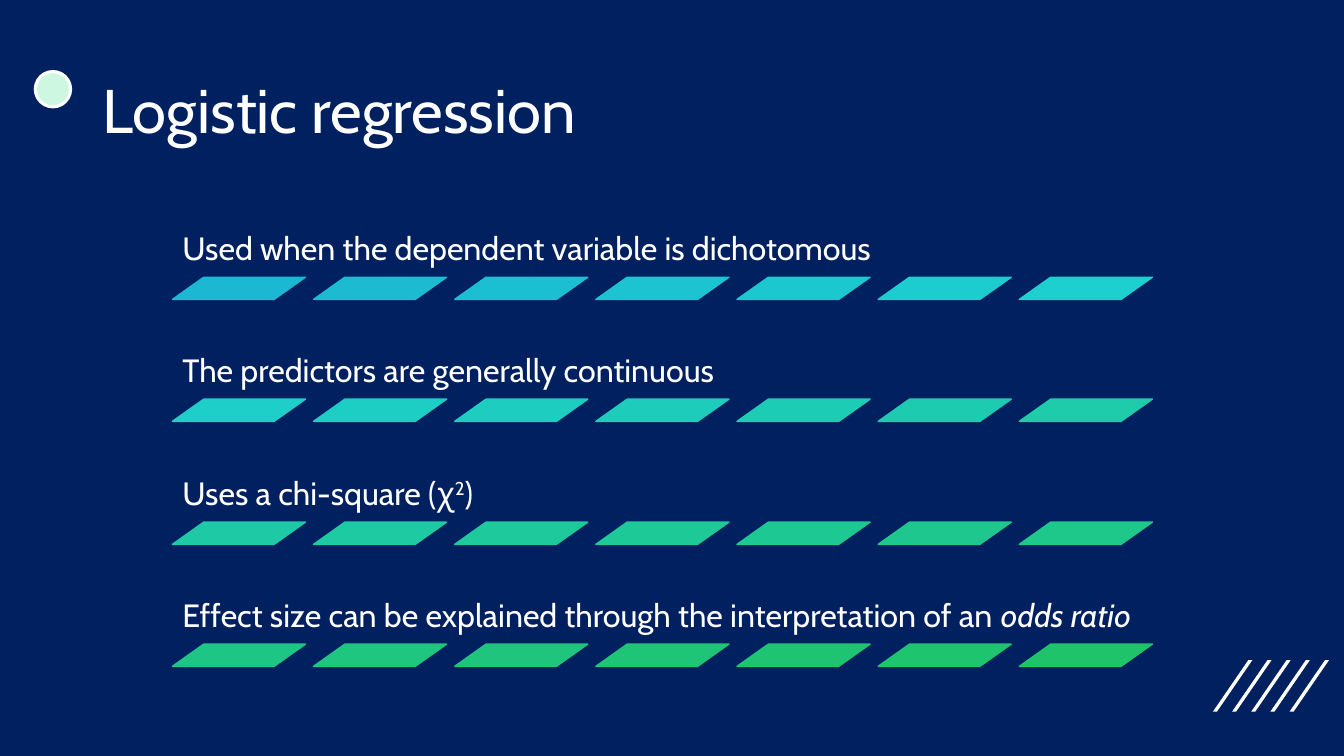
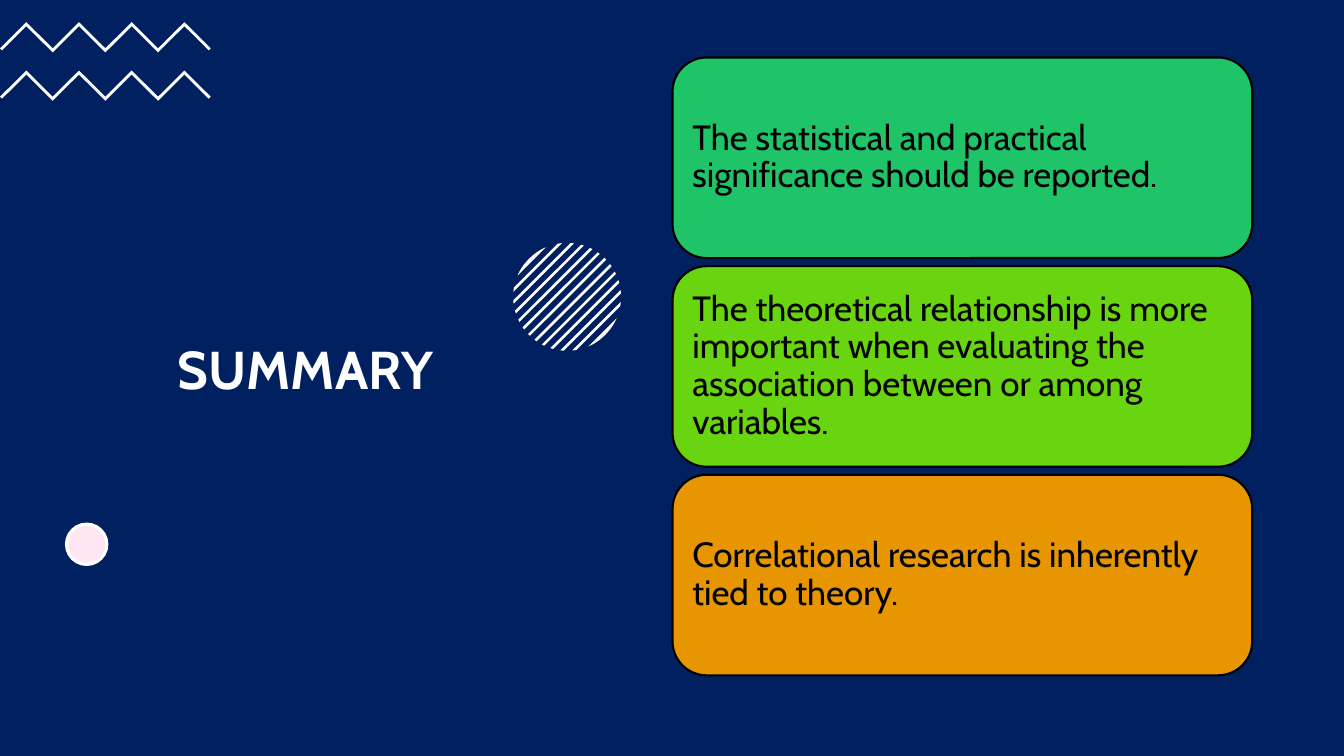
from colorsys import hls_to_rgb, rgb_to_hls
from dataclasses import dataclass
from math import sqrt

from pptx import Presentation
from pptx.dml.color import RGBColor as Rgb
from pptx.enum.shapes import MSO_SHAPE as Shape
from pptx.enum.text import MSO_ANCHOR as Anchor, PP_ALIGN as Align
from pptx.util import Pt

SCALE = 9144  # EMU in one px, 100 px to the inch


@dataclass(frozen=True)
class Theme:
    font: str = "Cabin"
    navy: str = "002060"
    white: str = "FFFFFF"
    black: str = "000000"
    mint: str = "CDF7E0"
    pink: str = "FFE6F2"
    blue: str = "1CB7D2"
    green: str = "1FC36A"
    cards: tuple = ("1FC368", "69D510", "E79500")
    title: int = 44
    head: int = 38
    card: int = 25
    row: int = 23


T = Theme()

ROWS = (
    ["Used when the dependent variable is dichotomous"],
    ["The predictors are generally continuous"],
    ["Uses a chi-square (χ", ("2", "sup"), ")"],
    ["Effect size can be explained through the interpretation of an ",
     ("odds ratio", "italic")],
)
CARDS = (
    "The statistical and practical significance should be reported.",
    "The theoretical relationship is more important when evaluating "
    "the association between or among variables.",
    "Correlational research is inherently tied to theory.",
)


def px(n):
    return round(n * SCALE)


# Basic elements

def paint(shape, fill, line=None, width=1):
    shape.shadow.inherit = False
    shape.fill.solid()
    shape.fill.fore_color.rgb = Rgb.from_string(fill)
    if line:
        shape.line.color.rgb = Rgb.from_string(line)
        shape.line.width = Pt(width)
    else:
        shape.line.fill.background()


def form(slide, kind, box, fill, line=None, width=1, adj=None):
    shape = slide.shapes.add_shape(kind, *map(px, box))
    paint(shape, fill, line, width)
    if adj is not None:
        shape.adjustments[0] = adj
    return shape


def outline(slide, points, fill):
    first, *rest = [(px(x), px(y)) for x, y in points]
    pen = slide.shapes.build_freeform(*first, scale=1.0)
    pen.add_line_segments(rest, close=True)
    paint(pen.convert_to_shape(), fill)


def write(shape, parts, size, color=T.white, bold=False, align=Align.LEFT,
          anchor=Anchor.MIDDLE, pad=10):
    """Fill a shape with runs; a part is a string or a (string, style) pair."""
    frame = shape.text_frame
    frame.word_wrap = True
    frame.vertical_anchor = anchor
    frame.margin_left = frame.margin_right = px(10)
    frame.margin_top = frame.margin_bottom = px(pad)
    para = frame.paragraphs[0]
    para.alignment = align
    para.line_spacing = 0.9
    for part in parts:
        text, style = (part, None) if isinstance(part, str) else part
        run = para.add_run()
        run.text = text
        font = run.font
        font.name, font.size, font.bold = T.font, Pt(size), bold
        font.color.rgb = Rgb.from_string(color)
        if style == "italic":
            font.italic = True
        elif style == "sup":
            run._r.get_or_add_rPr().set("baseline", "30000")


def label(slide, box, parts, size, **form_args):
    write(slide.shapes.add_textbox(*map(px, box)), parts, size, **form_args)


def dot(slide, x, y, size, fill):
    form(slide, Shape.OVAL, (x, y, size, size), fill, T.white, 2.25)


def blend(start, end, count):
    """Even steps between two colours, by hue, lightness and saturation."""
    ends = [rgb_to_hls(*(v / 255 for v in Rgb.from_string(c)))
            for c in (start, end)]
    for i in range(count):
        mix = [a + (b - a) * i / (count - 1) for a, b in zip(*ends)]
        yield str(Rgb(*(round(v * 255) for v in hls_to_rgb(*mix))))


# Ornaments

def slashes(slide):
    for i in range(5):
        x = 1203 + 19 * i
        outline(slide, [(x + 4, 706), (x, 706), (x + 35, 655), (x + 39, 655)],
                T.white)


def zigzag(slide, top, count=8, width=209, rise=26, thick=4):
    upper = [(width * i / count, top + rise * (1 - i % 2))
             for i in range(count + 1)]
    lower = [(x, y + thick) for x, y in upper[1:-1]]
    foot = top + rise + thick // 2
    outline(slide, upper + [(width - 2, foot)] + lower[::-1] + [(2, foot)],
            T.white)


def disc(slide, mid_x, mid_y, radius, count=13, gap=8.5, thick=2.6):
    """A circle cut into diagonal stripes."""
    steps = 8
    for i in range(count):
        mid = (i - count // 2) * gap
        low = max(mid - thick / 2, -radius)
        high = min(mid + thick / 2, radius)
        if i == 0:
            low = -radius
        elif i == count - 1:
            high = radius
        sides = {1: [], -1: []}
        for k in range(steps + 1):
            off = low + (high - low) * k / steps
            half = sqrt(max(radius ** 2 - off ** 2, 0))
            for sign, side in sides.items():
                side.append((mid_x + (off + sign * half) / sqrt(2),
                             mid_y + (off - sign * half) / sqrt(2)))
        outline(slide, sides[1] + sides[-1][::-1], T.white)


# Slides

def page(deck):
    slide = deck.slides.add_slide(deck.slide_layouts[6])
    fill = slide.background.fill
    fill.solid()
    fill.fore_color.rgb = Rgb.from_string(T.navy)
    return slide


def logistic(deck):
    slide = page(deck)
    slashes(slide)
    dot(slide, 35, 71, 35, T.mint)
    label(slide, (92, 40, 1150, 145), ["Logistic regression"], T.title, pad=5)
    bars = 7
    tints = blend(T.blue, T.green, bars * len(ROWS))
    for i, parts in enumerate(ROWS):
        top = 185 + round(121.3 * i)
        label(slide, (171, top, 991, 90), parts, T.row, anchor=Anchor.BOTTOM)
        for k in range(bars):
            tint = next(tints)
            form(slide, Shape.PARALLELOGRAM, (171 + 140 * k, top + 90, 132, 22),
                 tint, tint, adj=1.41)


def summary(deck):
    slide = page(deck)
    label(slide, (99, 70, 408, 599), ["SUMMARY"], T.head, bold=True,
          align=Align.CENTER, pad=5)
    for top in (22, 70):
        zigzag(slide, top)
    disc(slide, 562.5, 294.5, 53.5)
    dot(slide, 66, 520, 40, T.pink)
    for i, (text, tint) in enumerate(zip(CARDS, T.cards)):
        card = form(slide, Shape.ROUNDED_RECTANGLE,
                    (667, 57 + 207 * i, 575, 199), tint, T.black, 1.5, 0.17)
        write(card, [text], T.card, color=T.black)


def main():
    deck = Presentation()
    deck.slide_width, deck.slide_height = px(1333), px(750)
    logistic(deck)
    summary(deck)
    deck.save("out.pptx")


if __name__ == "__main__":
    main()
